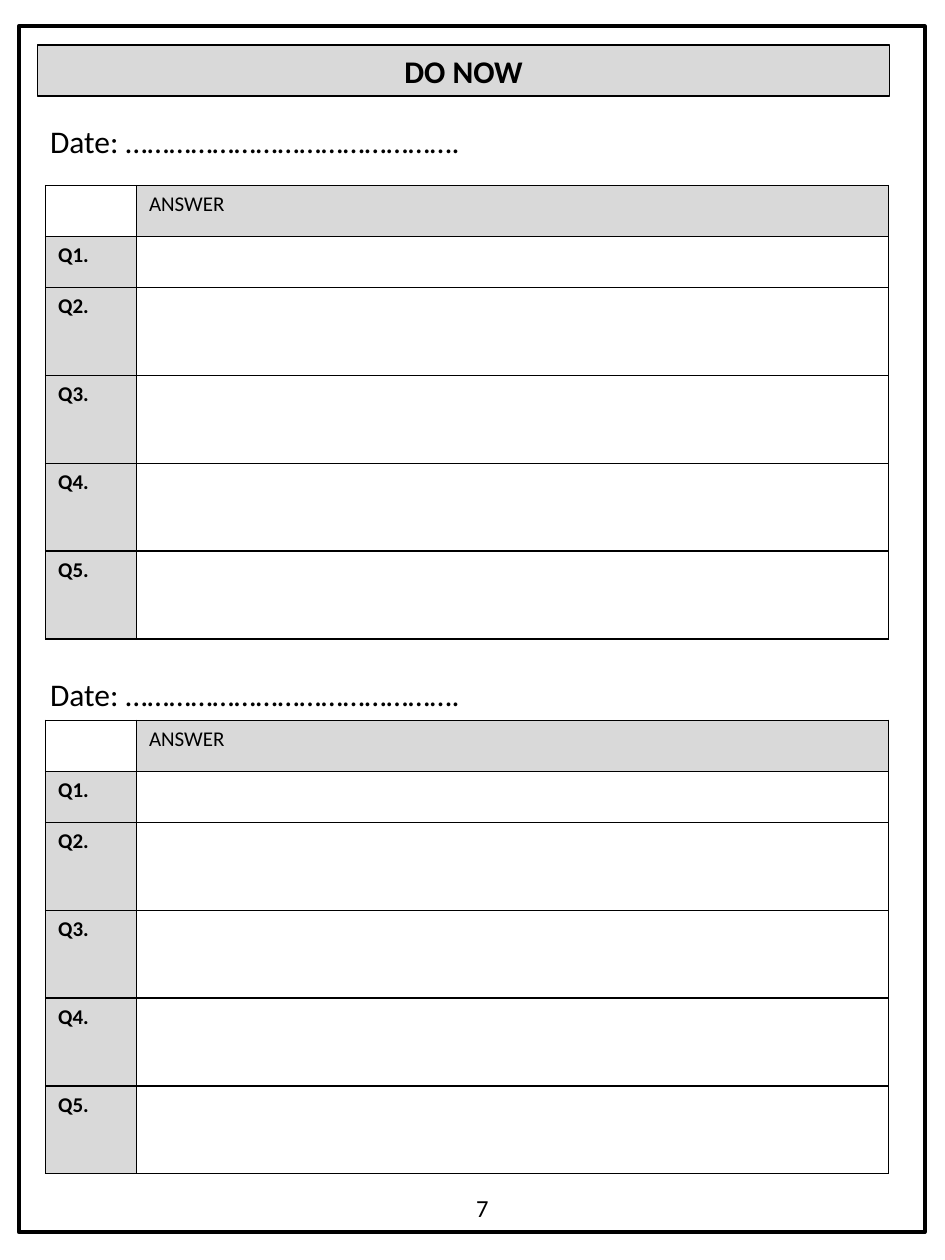
from lxml import etree
from pptx import Presentation
from pptx.dml.color import RGBColor
from pptx.enum import shapes, text
from pptx.oxml import ns
from pptx.util import Cm, Pt

BLACK, GREY = "000000", "D9D9D9"
DATE_LINE = "Date: ………………………………………."
QUESTIONS = [f"Q{number}." for number in range(1, 6)]
COLUMN_WIDTHS = [1.83, 15.16]
ROW_HEIGHTS = [1.03] * 2 + [1.77] * 4


def color(value):
    return RGBColor.from_string(value)


def write(frame, words, size, bold=False, align=text.PP_ALIGN.LEFT):
    paragraph = frame.paragraphs[0]
    paragraph.alignment = align
    run = paragraph.add_run()
    run.text = words
    run.font.color.rgb = color(BLACK)
    for name, value in {"name": "Calibri", "size": Pt(size), "bold": bold}.items():
        setattr(run.font, name, value)


def add_box(slide, left, top, width, height, line_width, fill=None):
    box = slide.shapes.add_shape(
        shapes.MSO_SHAPE.RECTANGLE, Cm(left), Cm(top), Cm(width), Cm(height))
    box.shadow.inherit = False
    box.line.color.rgb = color(BLACK)
    box.line.width = Pt(line_width)
    if fill:
        box.fill.solid()
        box.fill.fore_color.rgb = color(fill)
    else:
        box.fill.background()
    return box


def add_label(slide, words, left, top, width, height, size):
    frame = slide.shapes.add_textbox(
        Cm(left), Cm(top), Cm(width), Cm(height)).text_frame
    layout = {"word_wrap": True, "auto_size": text.MSO_AUTO_SIZE.SHAPE_TO_FIT_TEXT}
    for name, value in layout.items():
        setattr(frame, name, value)
    write(frame, words, size)


def add_borders(cell):
    """Draw all four edges; they must precede the cell's fill in the XML."""
    properties = cell._tc.get_or_add_tcPr()
    for edge in ("lnL", "lnR", "lnT", "lnB"):
        line = etree.SubElement(properties, ns.qn(f"a:{edge}"), w=str(Pt(1)))
        fill = etree.SubElement(line, ns.qn("a:solidFill"))
        etree.SubElement(fill, ns.qn("a:srgbClr"), val=BLACK)


def fill_cell(cell, words, bold):
    """Shade and label a heading cell; leave an answer cell clear."""
    add_borders(cell)
    if words:
        cell.fill.solid()
        cell.fill.fore_color.rgb = color(GREY)
        write(cell.text_frame, words, 12, bold)
    else:
        cell.fill.background()


def add_answer_table(slide, top):
    rows = [("", "ANSWER")] + [(question, "") for question in QUESTIONS]
    table = slide.shapes.add_table(
        len(rows), len(COLUMN_WIDTHS), Cm(0.92), Cm(top),
        Cm(sum(COLUMN_WIDTHS)), Cm(sum(ROW_HEIGHTS))).table
    for name, value in {"first_row": False, "horz_banding": False}.items():
        setattr(table, name, value)
    for column, width in zip(table.columns, COLUMN_WIDTHS):
        column.width = Cm(width)
    for row, height, labels in zip(table.rows, ROW_HEIGHTS, rows):
        row.height = Cm(height)
        for cell, words in zip(row.cells, labels):
            fill_cell(cell, words, bold=words in QUESTIONS)


def main():
    deck = Presentation()
    deck.slide_width, deck.slide_height = Cm(19.05), Cm(25.4)
    slide = deck.slides.add_slide(deck.slide_layouts[6])

    add_box(slide, 0.38, 0.53, 18.26, 24.31, 2.25)
    banner = add_box(slide, 0.76, 0.91, 17.17, 1.03, 0.75, GREY)
    write(banner.text_frame, "DO NOW", 18, True, text.PP_ALIGN.CENTER)

    for date_top, table_top in ((2.34, 3.74), (13.49, 14.52)):
        add_label(slide, DATE_LINE, 0.76, date_top, 13.08, 1.03, 18)
        add_answer_table(slide, table_top)

    add_label(slide, "7", 9.35, 23.93, 1.35, 0.86, 14)
    deck.save("out.pptx")


if __name__ == "__main__":
    main()
